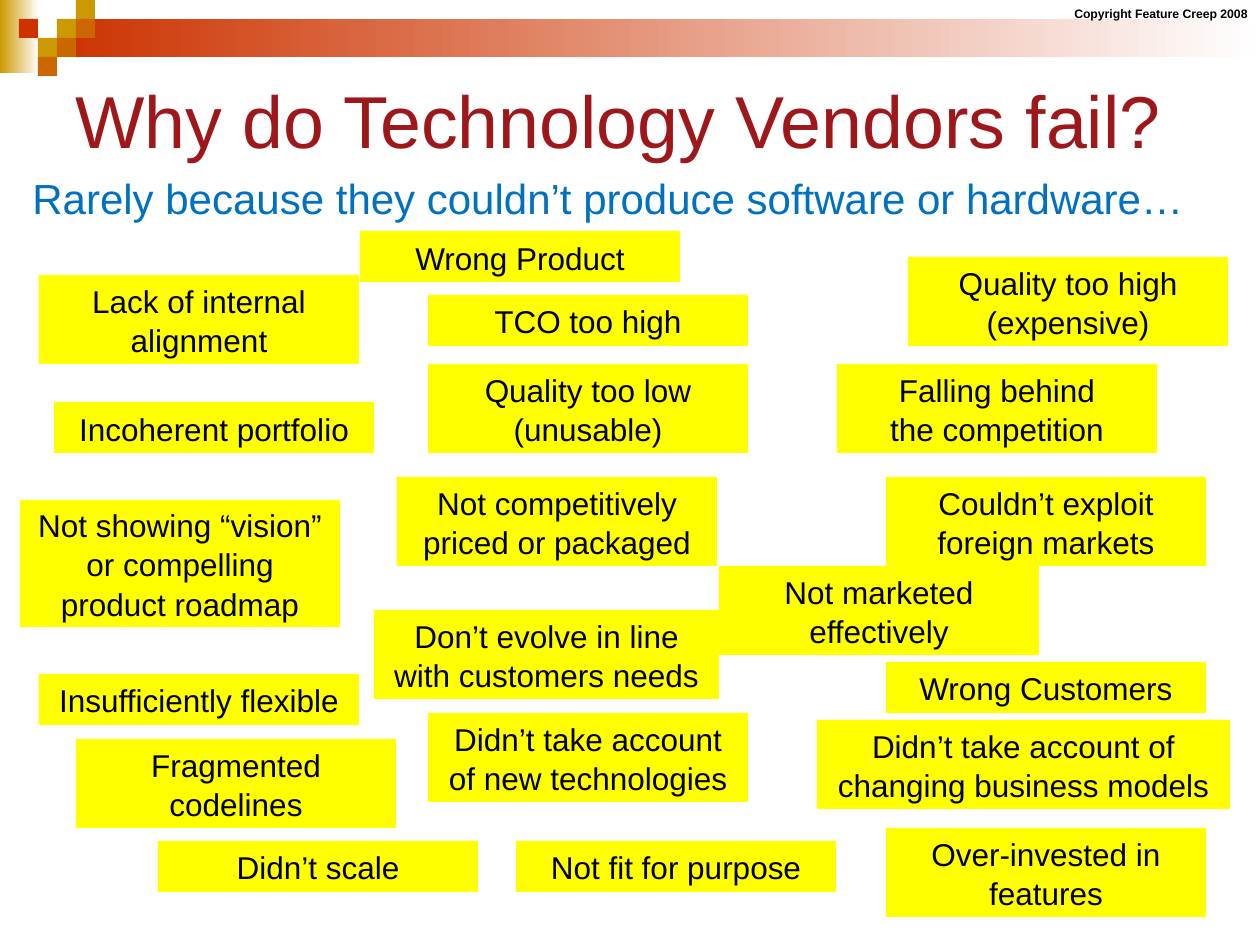
from pptx import Presentation, util as u
from pptx.dml.color import RGBColor
from pptx.enum import shapes, text

PX = 914400 // 126
CELL = 19            # header mosaic square
LINE, PADDING = 38, 13  # height of a line and of the insets in a label
WIDTH = 320

COPYRIGHT = "Copyright Feature Creep 2008"
TITLE = "Why do Technology Vendors fail?"
SUBTITLE = "Rarely because they couldn’t produce software or hardware…"

# left, top, width, height, start colour
BANDS = [(0, 0, 39, 73, "CC9900"), (57, 19, 1203, 38, "CC3300")]

# column, row, colour
MOSAIC = [
    (3, 1, "CC9900"), (4, 0, "CC9900"), (4, 1, "CC6600"), (2, 2, "CC9900"),
    (1, 1, "CC3300"), (3, 2, "CC6600"), (2, 3, "CC6600"),
]

# left, top, width, number of lines, paragraphs
REASONS = [
    (516, 841, WIDTH, 1, ["Not fit for purpose"]),
    (397, 477, WIDTH, 2, ["Not competitively priced or packaged"]),
    (837, 364, WIDTH, 2, ["Falling behind", "the competition"]),
    (719, 566, WIDTH, 2, ["Not marketed effectively"]),
    (374, 610, 345, 2, ["Don’t evolve in line with customers needs"]),
    (428, 713, WIDTH, 2, ["Didn’t take account of new technologies"]),
    (817, 720, 413, 2, ["Didn’t take account of changing business models"]),
    (20, 500, WIDTH, 3, ["Not showing “vision” or compelling product roadmap"]),
    (39, 674, WIDTH, 1, ["Insufficiently flexible"]),
    (158, 841, WIDTH, 1, ["Didn’t scale"]),
    (428, 295, WIDTH, 1, ["TCO too high"]),
    (886, 477, WIDTH, 2, ["Couldn’t exploit foreign markets"]),
    (886, 828, WIDTH, 2, ["Over-invested in features"]),
    (908, 257, WIDTH, 2, ["Quality too high (expensive)"]),
    (428, 364, WIDTH, 2, ["Quality too low (unusable)"]),
    (76, 739, WIDTH, 2, ["Fragmented codelines"]),
    (54, 402, WIDTH, 1, ["Incoherent portfolio"]),
    (39, 275, WIDTH, 2, ["Lack of internal alignment"]),
    (360, 231, WIDTH, 1, ["Wrong Product"]),
    (886, 662, WIDTH, 1, ["Wrong Customers"]),
]


def rgb(value):
    return RGBColor.from_string(value)


def add_rectangle(slide, box, color):
    shape = slide.shapes.add_shape(shapes.MSO_SHAPE.RECTANGLE, *(n * PX for n in box))
    shape.shadow.inherit = False
    shape.line.fill.background()
    shape.fill.solid()
    shape.fill.fore_color.rgb = rgb(color)
    return shape


def add_band(slide, box, color):
    fill = add_rectangle(slide, box, color).fill
    fill.gradient()
    fill.gradient_angle = 0
    for stop, position, stop_color in zip(fill.gradient_stops, (0, 1), (color, "FFFFFF")):
        stop.position = position
        stop.color.rgb = rgb(stop_color)


def write(shape, lines, size, color, bold=False, align=text.PP_ALIGN.LEFT,
          anchor=text.MSO_ANCHOR.TOP, wrap=True, spacing=None):
    frame = shape.text_frame
    frame.word_wrap = wrap
    frame.vertical_anchor = anchor
    for index, line in enumerate(lines):
        paragraph = frame.add_paragraph() if index else frame.paragraphs[0]
        paragraph.alignment = align
        paragraph.line_spacing = spacing
        run = paragraph.add_run()
        run.text = line
        run.font.name = "Arial"
        run.font.size = u.Pt(size)
        run.font.bold = bold
        run.font.color.rgb = rgb(color)


def add_text(slide, box, line, size, color, **options):
    shape = slide.shapes.add_textbox(*(n * PX for n in box))
    write(shape, [line], size, color, **options)


def main():
    presentation = Presentation()
    presentation.slide_width, presentation.slide_height = u.Inches(10), u.Inches(7.5)
    slide = presentation.slides.add_slide(presentation.slide_layouts[6])

    # Header bands and mosaic
    for *box, color in BANDS:
        add_band(slide, box, color)
    for column, row, color in MOSAIC:
        add_rectangle(slide, (column * CELL, row * CELL, CELL, CELL), color)

    # Copyright, title and subtitle
    add_text(slide, (1058, 0, 202, 28), COPYRIGHT, 7, "000000", bold=True,
             align=text.PP_ALIGN.RIGHT, wrap=False)
    add_text(slide, (63, 25, 1134, 189), TITLE, 42, "9E171B",
             anchor=text.MSO_ANCHOR.MIDDLE)
    add_text(slide, (20, 166, 1227, 60), SUBTITLE, 24, "0070C0")

    # Reasons for failure
    for left, top, width, line_count, lines in REASONS:
        label = add_rectangle(slide, (left, top, width, PADDING + LINE * line_count), "FFFF00")
        write(label, lines, 18, "000000", align=text.PP_ALIGN.CENTER,
              anchor=text.MSO_ANCHOR.MIDDLE, spacing=1.05)

    presentation.save("out.pptx")


if __name__ == "__main__":
    main()
